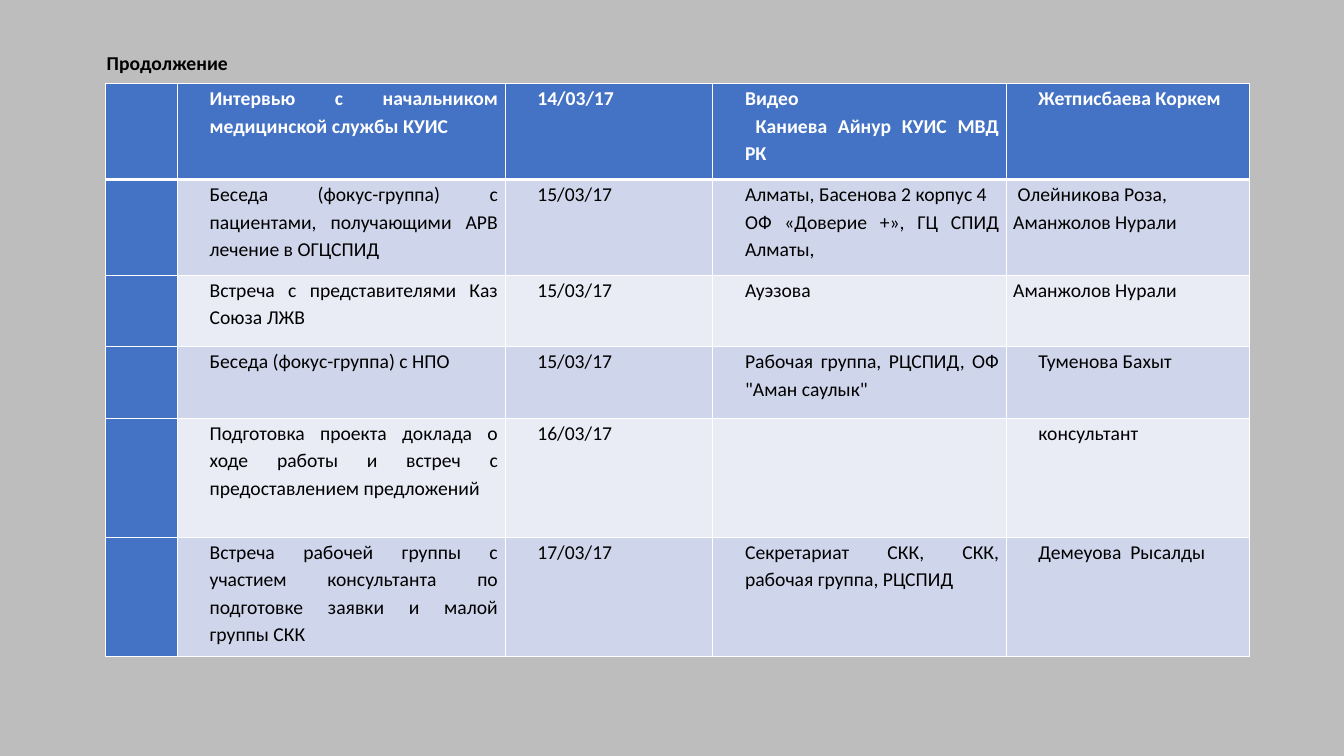
from pptx import Presentation
from pptx.dml.color import RGBColor
from pptx.enum.text import MSO_ANCHOR, PP_ALIGN
from pptx.oxml import parse_xml
from pptx.oxml.ns import nsdecls
from pptx.util import Inches, Pt

MID = MSO_ANCHOR.MIDDLE
JUST = PP_ALIGN.JUSTIFY

HEX = {
    "back": "BDBDBD",
    "blue": "4472C4",
    "dark": "CFD5EA",
    "pale": "E9EBF5",
    "white": "FFFFFF",
    "black": "000000",
}
COLS = [0.71, 3.25, 2.06, 2.91, 2.41]
ROWS = [0.95, 0.95, 0.71, 0.71, 1.18, 1.18]
PLAN = [
    ["", "Интервью с начальником медицинской службы КУИС", "14/03/17",
     "Видео\n Каниева Айнур КУИС МВД РК", "Жетписбаева Коркем"],
    ["", "Беседа (фокус-группа) с пациентами, получающими АРВ лечение в ОГЦСПИД",
     "15/03/17", "Алматы, Басенова 2 корпус 4\nОФ «Доверие +», ГЦ СПИД Алматы,",
     " Олейникова Роза,\nАманжолов Нурали"],
    ["", "Встреча с представителями Каз Союза ЛЖВ", "15/03/17", "Ауэзова",
     "Аманжолов Нурали"],
    ["", "Беседа (фокус-группа) с НПО", "15/03/17",
     "Рабочая группа, РЦСПИД, ОФ \"Аман саулык\"", "Туменова Бахыт"],
    ["", "Подготовка проекта доклада о ходе работы и встреч с предоставлением предложений",
     "16/03/17", "", "консультант"],
    ["", "Встреча рабочей группы с участием консультанта по подготовке заявки и малой группы СКК",
     "17/03/17", "Секретариат СКК, СКК, рабочая группа, РЦСПИД", "Демеуова  Рысалды"],
]
FLUSH = [(1, 4), (2, 4)]
INSET = {
    "margin_left": Inches(0.07),
    "margin_right": Inches(0.07),
    "margin_top": 0,
    "margin_bottom": 0,
}


def style(par, color, bold, space):
    par.line_spacing = space
    for run in par.runs:
        form = {"name": "Calibri", "size": Pt(14), "bold": bold}
        for key, val in form.items():
            setattr(run.font, key, val)
        run.font.color.rgb = RGBColor.from_string(HEX[color])


def edge(cell, side, width):
    line = parse_xml(
        f'<a:ln{side} {nsdecls("a")} w="{Pt(width)}"><a:solidFill>'
        f'<a:srgbClr val="{HEX["white"]}"/></a:solidFill></a:ln{side}>'
    )
    cell._tc.get_or_add_tcPr().append(line)


prs = Presentation()
prs.slide_width = Inches(13.33)
prs.slide_height = Inches(7.5)
slide = prs.slides.add_slide(prs.slide_layouts[6])
back = slide.background.fill
back.solid()
back.fore_color.rgb = RGBColor.from_string(HEX["back"])

title = slide.shapes.add_textbox(Inches(0.96), Inches(0.4), Inches(11.45), Inches(0.47))
frame = title.text_frame
frame.word_wrap = True
frame.vertical_anchor = MID
frame.text = "Продолжение"
style(frame.paragraphs[0], "black", True, 0.9)

table = slide.shapes.add_table(
    len(ROWS), len(COLS), Inches(1.05), Inches(0.83), Inches(sum(COLS)), Inches(sum(ROWS))
).table
for col, width in zip(table.columns, COLS):
    col.width = Inches(width)
for row, height in zip(table.rows, ROWS):
    row.height = Inches(height)

for r, line in enumerate(PLAN):
    head = r == 0
    for c, text in enumerate(line):
        cell = table.cell(r, c)
        for key, val in INSET.items():
            setattr(cell, key, val)
        for side in "LRTB":
            thick = (r, side) in [(0, "B"), (1, "T")]
            edge(cell, side, 3 if thick else 1)
        fill = "blue" if head or c == 0 else "dark" if r % 2 else "pale"
        cell.fill.solid()
        cell.fill.fore_color.rgb = RGBColor.from_string(HEX[fill])
        if not text:
            continue
        cell.text = text
        for par in cell.text_frame.paragraphs:
            par.alignment = JUST
            style(par, "white" if head else "black", head, 1.15)
            if (r, c) not in FLUSH:
                par._p.get_or_add_pPr().set("marL", str(Inches(0.25)))

prs.save("out.pptx")
